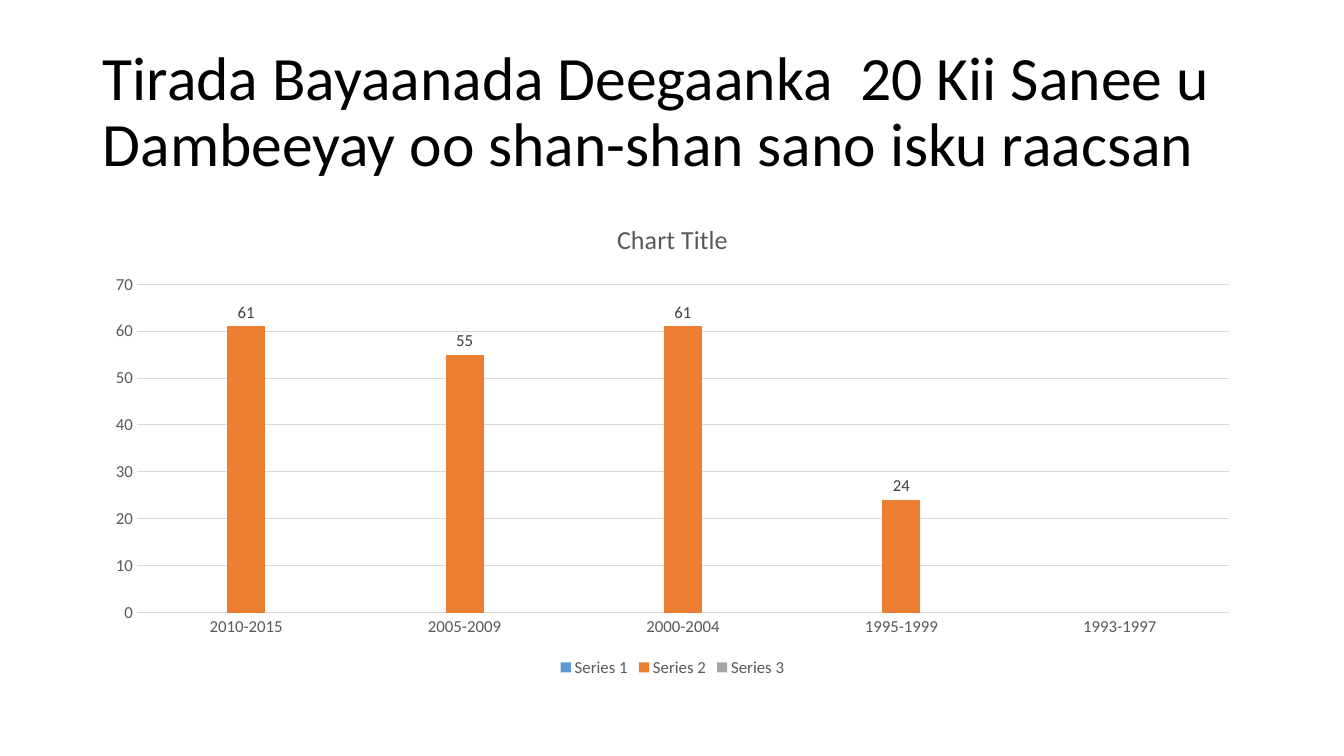
import pptx
import pptx.chart.data
import pptx.dml.color
import pptx.enum.chart
import pptx.enum.text
import pptx.util

PX = 9144
FONT = "Calibri"
GRAY = "595959"
RULE = "D9D9D9"
HEADING = "Tirada Bayaanada Deegaanka  20 Kii Sanee u Dambeeyay oo shan-shan sano isku raacsan"
PERIODS = ["2010-2015", "2005-2009", "2000-2004", "1995-1999", "1993-1997"]
SERIES = [
    ("Series 1", [None] * 5, "5B9BD5"),
    ("Series 2", [61, 55, 61, 24, None], "ED7D31"),
    ("Series 3", [None] * 5, "A5A5A5"),
]


def color(value):
    """Turn a hex string into a colour."""
    return pptx.dml.color.RGBColor.from_string(value)


def style_font(font, size, value):
    """Set the typeface, size and colour of a font."""
    font.name = FONT
    font.size = pptx.util.Pt(size)
    font.bold = False
    font.color.rgb = color(value)


def style_line(line):
    """Draw a thin light rule."""
    line.color.rgb = color(RULE)
    line.width = pptx.util.Pt(0.75)


def add_heading(page, left, top, width, height):
    """Place the slide heading in its box."""
    box = page.shapes.add_textbox(left * PX, top * PX, width * PX, height * PX)
    frame = box.text_frame
    frame.word_wrap = True
    frame.vertical_anchor = pptx.enum.text.MSO_ANCHOR.MIDDLE
    frame.text = HEADING
    para = frame.paragraphs[0]
    para.line_spacing = 0.9
    style_font(para.runs[0].font, 44, "000000")


def style_axes(chart):
    """Style both axes and the horizontal grid."""
    for axis in (chart.category_axis, chart.value_axis):
        axis.major_tick_mark = pptx.enum.chart.XL_TICK_MARK.NONE
        axis.minor_tick_mark = pptx.enum.chart.XL_TICK_MARK.NONE
        style_font(axis.tick_labels.font, 12, GRAY)
    style_line(chart.category_axis.format.line)
    chart.value_axis.format.line.fill.background()
    chart.value_axis.has_major_gridlines = True
    style_line(chart.value_axis.major_gridlines.format.line)
    chart.value_axis.minimum_scale = 0
    chart.value_axis.maximum_scale = 70
    chart.value_axis.major_unit = 10


def style_series(plot):
    """Colour the columns and label those with values."""
    plot.gap_width = 219
    plot.overlap = -27
    plot.vary_by_categories = False
    for series, (name, values, fill) in zip(plot.series, SERIES):
        series.format.fill.solid()
        series.format.fill.fore_color.rgb = color(fill)
        series.invert_if_negative = False
        if any(values):
            labels = series.data_labels
            labels.show_value = True
            labels.position = pptx.enum.chart.XL_LABEL_POSITION.OUTSIDE_END
            style_font(labels.font, 12, "404040")


def add_column_chart(page, left, top, width, height):
    """Place the column chart in its box."""
    data = pptx.chart.data.CategoryChartData()
    data.categories = PERIODS
    for name, values, fill in SERIES:
        data.add_series(name, values)
    chart = page.shapes.add_chart(
        pptx.enum.chart.XL_CHART_TYPE.COLUMN_CLUSTERED,
        left * PX, top * PX, width * PX, height * PX, data,
    ).chart
    style_font(chart.font, 10, "000000")
    chart.has_title = True
    title = chart.chart_title.text_frame
    title.text = "Chart Title"
    style_font(title.paragraphs[0].runs[0].font, 18.6, GRAY)
    chart.chart_title.include_in_layout = False
    chart.has_legend = True
    chart.legend.position = pptx.enum.chart.XL_LEGEND_POSITION.BOTTOM
    chart.legend.include_in_layout = False
    style_font(chart.legend.font, 12, GRAY)
    style_axes(chart)
    style_series(chart.plots[0])


def main():
    """Build and save the slide."""
    deck = pptx.Presentation()
    deck.slide_width = 1333 * PX
    deck.slide_height = 750 * PX
    page = deck.slides.add_slide(deck.slide_layouts[6])
    page.background.fill.solid()
    page.background.fill.fore_color.rgb = color("FFFFFF")
    add_heading(page, 92, 40, 1150, 145)
    add_column_chart(page, 92, 200, 1150, 476)
    deck.save("out.pptx")


if __name__ == "__main__":
    main()
